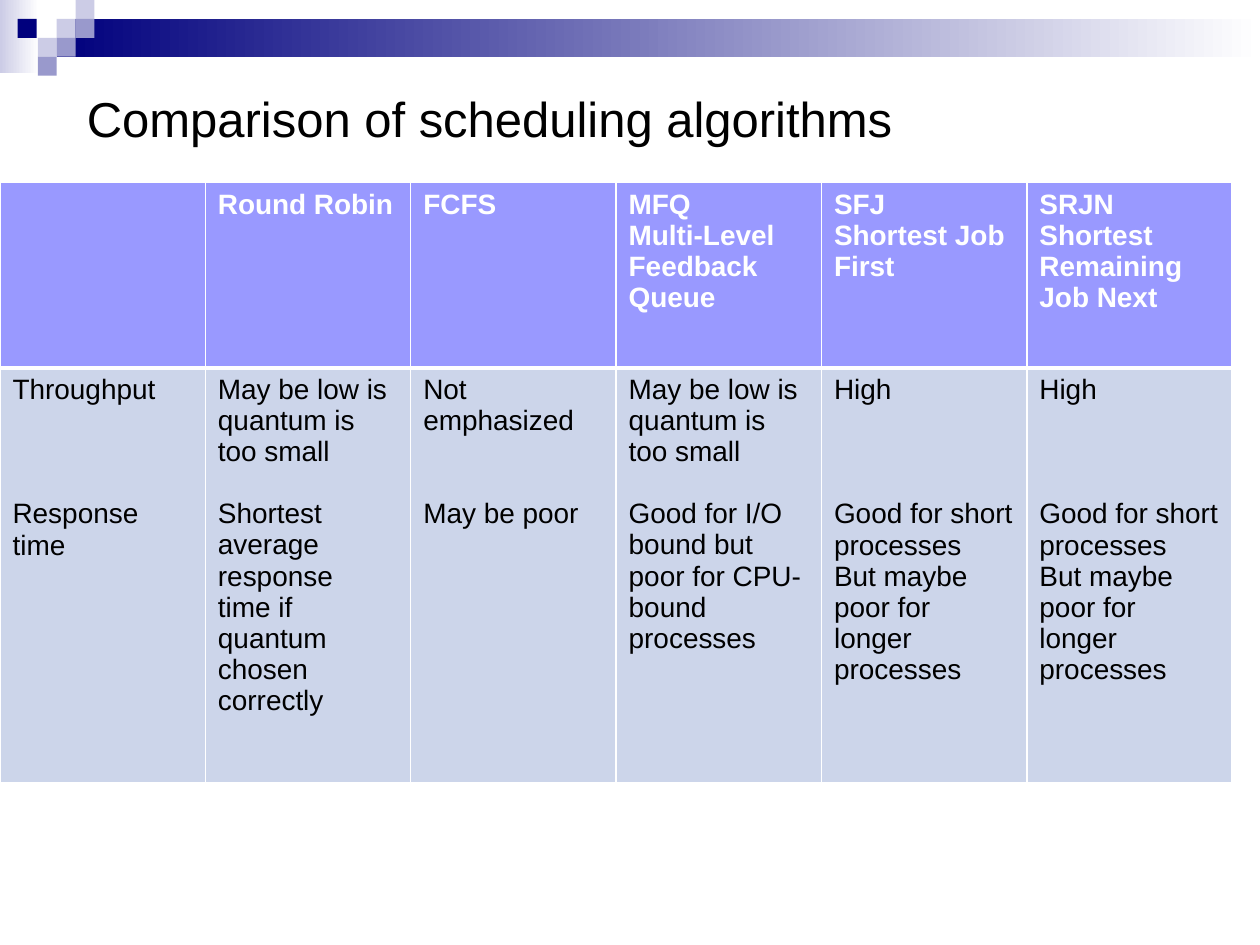
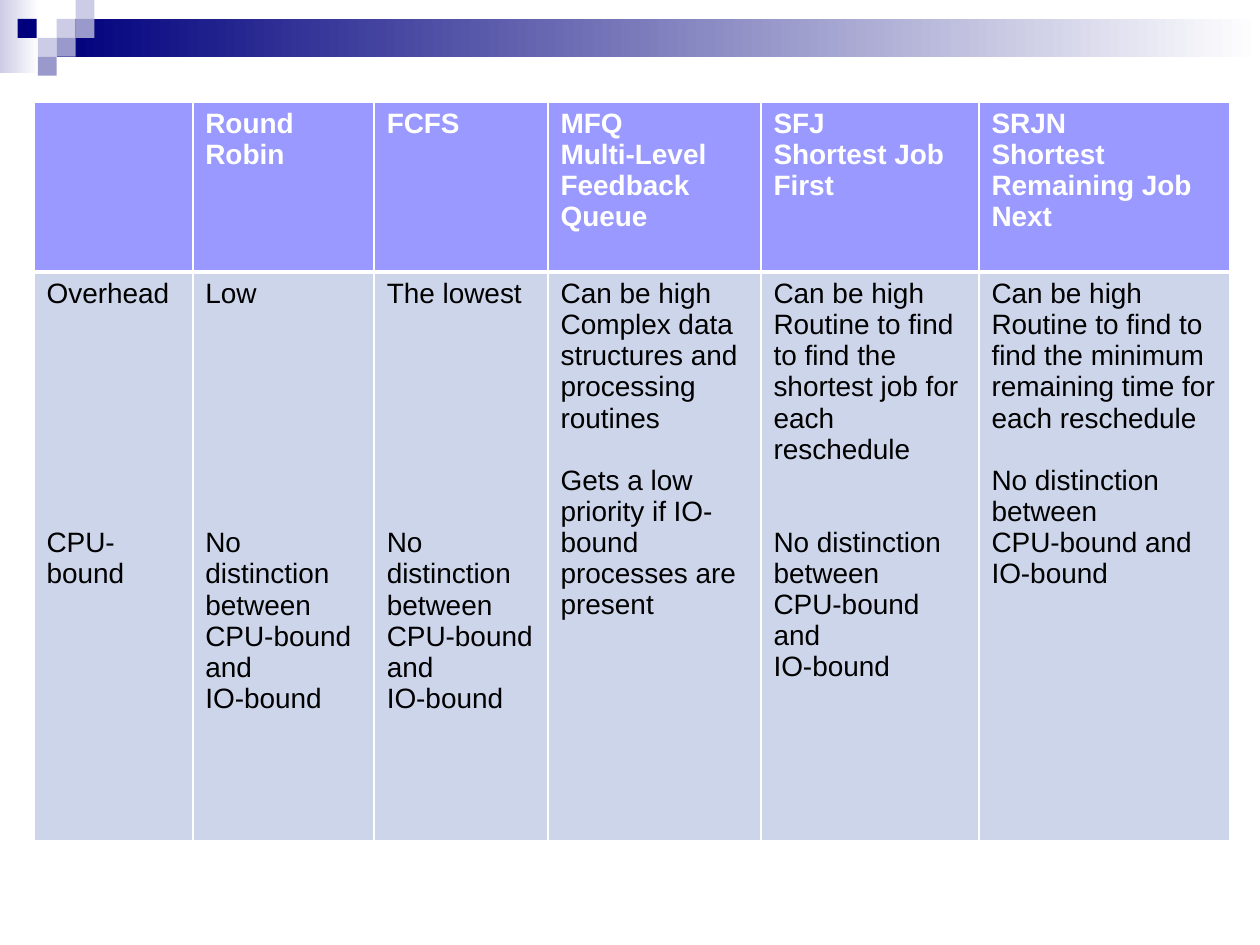
from dataclasses import dataclass
from lxml import etree
from pptx import Presentation
from pptx.dml.color import RGBColor
from pptx.enum.shapes import MSO_SHAPE
from pptx.enum.text import MSO_ANCHOR, PP_ALIGN
from pptx.oxml.ns import qn
from pptx.util import Pt

RECT = MSO_SHAPE.RECTANGLE
LOW, LEFT = MSO_ANCHOR.BOTTOM, PP_ALIGN.LEFT
PX = 9144  # 100 px to the inch
WIDE, HIGH = 1000, 750
STEP = 15  # side of one small square


@dataclass(frozen=True)
class Theme:
    face: str = "Arial"
    ink: str = "000000"
    white: str = "FFFFFF"
    navy: str = "00007D"
    pale: str = "CCCCE6"
    mid: str = "9999CC"
    head: str = "9999FF"
    body: str = "CCD5EA"
    title: int = 28
    text: int = 16
    line: float = 17.8  # height of one line of table text, points
    thin: int = 1
    thick: int = 3


def put(item, **vals):
    for name, val in vals.items():
        setattr(item, name, val)


class Deck:
    def __init__(self, theme):
        self.theme = theme
        self.file = Presentation()
        put(self.file, slide_width=WIDE * PX, slide_height=HIGH * PX)
        self.slide = None

    def page(self):
        """Start a slide with the shared band and squares."""
        t = self.theme
        self.slide = self.file.slides.add_slide(self.file.slide_layouts[6])
        self.rect(0, 0, 31, 58, t.pale, t.white)
        self.rect(45, 15, 955, 30, t.navy, t.white)
        self.rect(14, 15, STEP, STEP, t.navy)
        for col, row, tint in ((3, 1, t.pale), (4, 0, t.pale), (4, 1, t.mid),
                               (2, 2, t.pale), (3, 2, t.mid), (2, 3, t.mid)):
            self.rect(col * STEP, row * STEP, STEP, STEP, tint)

    def rect(self, x, y, w, h, tint, fade=None):
        box = self.slide.shapes.add_shape(RECT, x * PX, y * PX, w * PX, h * PX)
        box.shadow.inherit = False
        box.line.fill.background()
        if fade:
            box.fill.gradient()
            box.fill.gradient_angle = 0
            for stop, hue in zip(box.fill.gradient_stops, (tint, fade)):
                stop.color.rgb = RGBColor.from_string(hue)
        else:
            box.fill.solid()
            box.fill.fore_color.rgb = RGBColor.from_string(tint)

    def words(self, para, text, size, tint, bold=False):
        para.alignment = LEFT
        run = para.add_run()
        run.text = text
        put(run.font, name=self.theme.face, size=Pt(size), bold=bold)
        run.font.color.rgb = RGBColor.from_string(tint)

    def title(self, text):
        box = self.slide.shapes.add_textbox(69 * PX, 61 * PX, 877 * PX, 56 * PX)
        frame = box.text_frame
        put(frame, word_wrap=True, vertical_anchor=LOW, margin_left=0,
            margin_top=5 * PX, margin_right=0, margin_bottom=0)
        self.words(frame.paragraphs[0], text, self.theme.title, self.theme.ink)

    def edge(self, cell, **sides):
        """Draw the cell borders, which stand before its fill."""
        props = cell._tc.get_or_add_tcPr()
        for spot, (side, size) in enumerate(sides.items()):
            line = etree.Element(qn("a:ln" + side), w=str(Pt(size)))
            fill = etree.SubElement(line, qn("a:solidFill"))
            etree.SubElement(fill, qn("a:srgbClr"), val=self.theme.white)
            props.insert(spot, line)

    def fill(self, cell, parts, tint, ink, bold):
        """Set text parts; a number sets how many lines to skip."""
        t = self.theme
        cell.fill.solid()
        cell.fill.fore_color.rgb = RGBColor.from_string(tint)
        frame, skip, first = cell.text_frame, 0, True
        for part in parts:
            if isinstance(part, int):
                skip = part
                continue
            for text in part.split("\n"):
                para = frame.paragraphs[0] if first else frame.add_paragraph()
                if skip:
                    para.space_before = Pt(skip * t.line)
                self.words(para, text, t.text, ink, bold)
                skip, first = 0, False

    def table(self, x, y, cols, rows, head, body):
        t = self.theme
        grid = self.slide.shapes.add_table(
            2, len(cols), x * PX, y * PX, sum(cols) * PX, sum(rows) * PX).table
        put(grid, first_row=True, horz_banding=False)
        for col, w in zip(grid.columns, cols):
            col.width = w * PX
        for row, h in zip(grid.rows, rows):
            row.height = h * PX
        for n, (top, base) in enumerate(zip(head, body)):
            self.fill(grid.cell(0, n), [top] if top else [], t.head, t.white, True)
            self.edge(grid.cell(0, n), L=t.thin, R=t.thin, T=t.thin, B=t.thick)
            self.fill(grid.cell(1, n), base, t.body, t.ink, False)
            self.edge(grid.cell(1, n), L=t.thin, R=t.thin, T=t.thick, B=t.thin)


# Words used more than once
HEADS = ("", "Round Robin", "FCFS", "MFQ\nMulti-Level\nFeedback Queue",
         "SFJ\nShortest Job First", "SRJN\nShortest Remaining Job Next")
SMALL = "May be low is quantum is too small"
SHORT = ("High", 3,
         "Good for short processes\nBut maybe poor for longer processes")
SAME = "No distinction\nbetween\nCPU-bound and\nIO-bound"

SPEED = (
    ("Throughput", 3, "Response\ntime"),
    (SMALL, 1, "Shortest average response\ntime if quantum chosen correctly"),
    ("Not emphasized", 2, "May be poor"),
    (SMALL, 1, "Good for I/O bound but poor for CPU-bound\nprocesses"),
    SHORT,
    SHORT,
)
COST = (
    ("Overhead", 7, "CPU-bound"),
    ("Low", 7, SAME),
    ("The lowest", 7, SAME),
    ("Can be high Complex data structures and processing routines", 1,
     "Gets a low priority if IO-bound processes are present"),
    ("Can be high Routine to find to find the shortest job for each reschedule",
     2, SAME),
    ("Can be high Routine to find to find the minimum remaining time for each "
     "reschedule", 1, SAME),
)


def main():
    deck = Deck(Theme())

    # Throughput and response time
    deck.page()
    deck.title("Comparison of scheduling algorithms")
    deck.table(0, 145, [163] * 6, [147, 329], HEADS, SPEED)

    # Overhead and bound work
    deck.page()
    deck.table(27, 81, [126, 144, 138, 169, 173, 199], [135, 451], HEADS, COST)

    deck.file.save("out.pptx")


if __name__ == "__main__":
    main()
